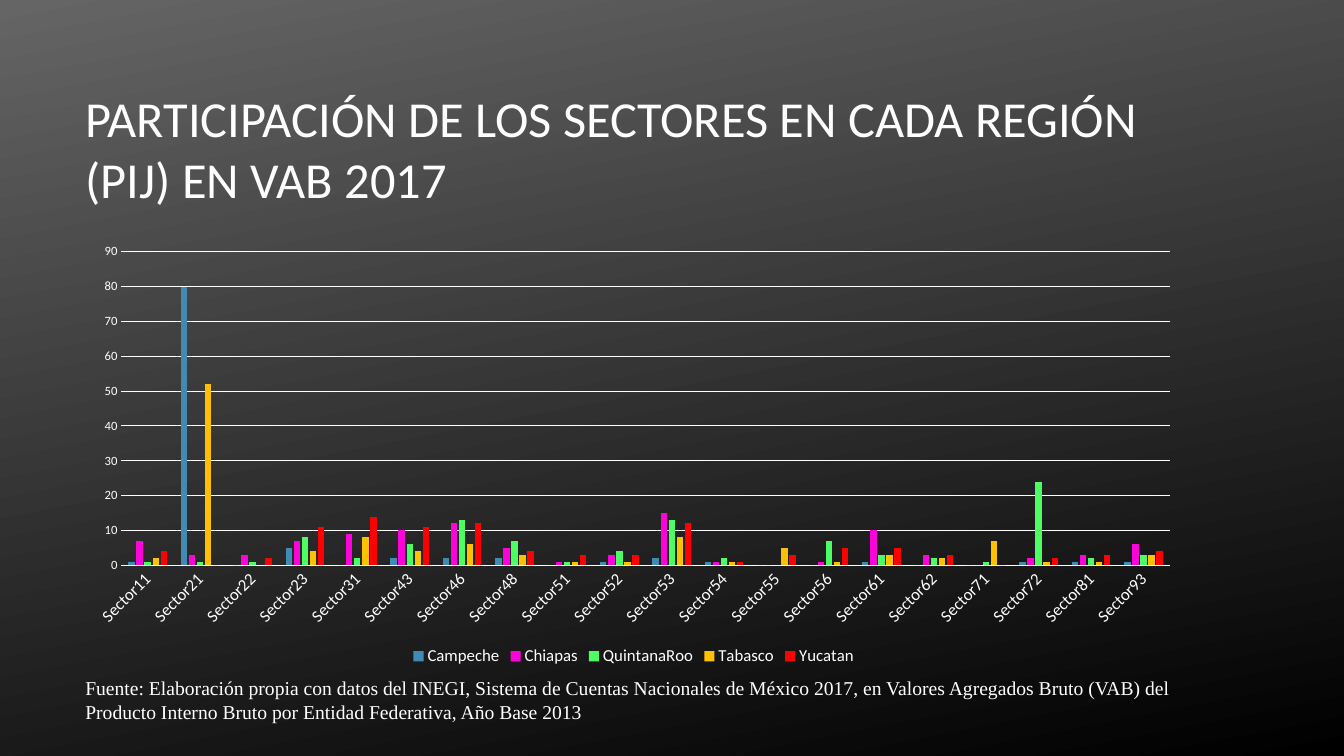
"""Build a slide on the share of each sector in five Mexican states."""
import pptx
import pptx.chart.data
import pptx.dml.color
import pptx.enum.chart
import pptx.enum.text
import pptx.util
from pptx.util import Cm

WHITE = "FFFFFF"
LEFT, WIDTH = Cm(1.9), Cm(28.14)
TITLE = "PARTICIPACIÓN DE LOS SECTORES EN CADA REGIÓN (PIJ) EN VAB 2017"
SOURCE = (
    "Fuente: Elaboración propia con datos del INEGI, Sistema de Cuentas Nacionales "
    "de México 2017, en Valores Agregados Bruto (VAB) del Producto Interno Bruto "
    "por Entidad Federativa, Año Base 2013"
)
SECTORS = [11, 21, 22, 23, 31, 43, 46, 48, 51, 52,
           53, 54, 55, 56, 61, 62, 71, 72, 81, 93]
STATES = [
    ("Campeche", "418AB3",
     [1, 80, 0, 5, 0, 2, 2, 2, 0, 1, 2, 1, 0, 0, 1, 0, 0, 1, 1, 1]),
    ("Chiapas", "FC04D9",
     [7, 3, 3, 7, 9, 10, 12, 5, 1, 3, 15, 1, 0, 1, 10, 3, 0, 2, 3, 6]),
    ("QuintanaRoo", "4CFE61",
     [1, 1, 1, 8, 2, 6, 13, 7, 1, 4, 13, 2, 0, 7, 3, 2, 1, 24, 2, 3]),
    ("Tabasco", "FFC000",
     [2, 52, 0, 4, 8, 4, 6, 3, 1, 1, 8, 1, 5, 1, 3, 2, 7, 1, 1, 3]),
    ("Yucatan", "FF0000",
     [4, 0, 2, 11, 14, 11, 12, 4, 3, 3, 12, 1, 3, 5, 5, 3, 0, 2, 3, 4]),
]


def tint(color, code):
    """Set a colour from a hex string."""
    color.rgb = pptx.dml.color.RGBColor.from_string(code)


def style(font, size, name="Calibri"):
    """Give a font its face, size and white colour."""
    font.name = name
    font.size = pptx.util.Pt(size)
    tint(font.color, WHITE)


def rule(line):
    """Draw a thin white line."""
    tint(line.color, WHITE)
    line.width = pptx.util.Pt(0.75)


def shade(slide):
    """Fill the background with a grey to black gradient."""
    fill = slide.background.fill
    fill.gradient()
    fill.gradient_angle = 281
    for stop, code in zip(fill.gradient_stops, ("656565", "000000")):
        tint(stop.color, code)


def write(shape, top, height, text, size, name, anchor):
    """Place a shape and fill it with one left-aligned paragraph."""
    shape.left, shape.top, shape.width, shape.height = LEFT, top, WIDTH, height
    frame = shape.text_frame
    frame.word_wrap = True
    frame.auto_size = pptx.enum.text.MSO_AUTO_SIZE.NONE
    frame.vertical_anchor = anchor
    frame.text = text
    para = frame.paragraphs[0]
    para.alignment = pptx.enum.text.PP_ALIGN.LEFT
    style(para.font, size, name)


def plot(slide):
    """Add the column chart of sectors by state."""
    data = pptx.chart.data.CategoryChartData()
    data.categories = [f"Sector{code}" for code in SECTORS]
    for name, _, values in STATES:
        data.add_series(name, values)
    kind = pptx.enum.chart.XL_CHART_TYPE.COLUMN_CLUSTERED
    chart = slide.shapes.add_chart(
        kind, LEFT, Cm(5.94), WIDTH, Cm(10.95), data).chart
    style(chart.font, 10)
    chart.has_title = False
    chart.has_legend = True
    chart.legend.position = pptx.enum.chart.XL_LEGEND_POSITION.BOTTOM
    chart.legend.include_in_layout = False
    style(chart.legend.font, 12)
    bars = chart.plots[0]
    bars.gap_width, bars.overlap, bars.vary_by_categories = 219, -27, False
    for series, (_, code, _) in zip(bars.series, STATES):
        series.format.fill.solid()
        tint(series.format.fill.fore_color, code)
        series.invert_if_negative = False
    scale(chart)


def scale(chart):
    """Format both axes of the chart."""
    base, side = chart.category_axis, chart.value_axis
    for axis, size in ((base, 12), (side, 9)):
        axis.major_tick_mark = pptx.enum.chart.XL_TICK_MARK.NONE
        axis.minor_tick_mark = pptx.enum.chart.XL_TICK_MARK.NONE
        style(axis.tick_labels.font, size)
    base._element.txPr.bodyPr.set("rot", "-2700000")
    rule(base.format.line)
    side.minimum_scale, side.maximum_scale, side.major_unit = 0, 90, 10
    side.format.line.fill.background()
    rule(side.major_gridlines.format.line)


def main():
    """Build and save the slide."""
    deck = pptx.Presentation()
    deck.slide_width, deck.slide_height = Cm(33.87), Cm(19.05)
    slide = deck.slides.add_slide(deck.slide_layouts.get_by_name("Title Only"))
    shade(slide)
    anchor = pptx.enum.text.MSO_ANCHOR
    write(slide.shapes.title, Cm(1.7), Cm(4.04), TITLE, 36, "Calibri",
          anchor.MIDDLE)
    plot(slide)
    note = slide.shapes.add_textbox(LEFT, Cm(16.92), WIDTH, Cm(1.45))
    write(note, Cm(16.92), Cm(1.45), SOURCE, 14, "Times New Roman", anchor.TOP)
    deck.save("out.pptx")


if __name__ == "__main__":
    main()
